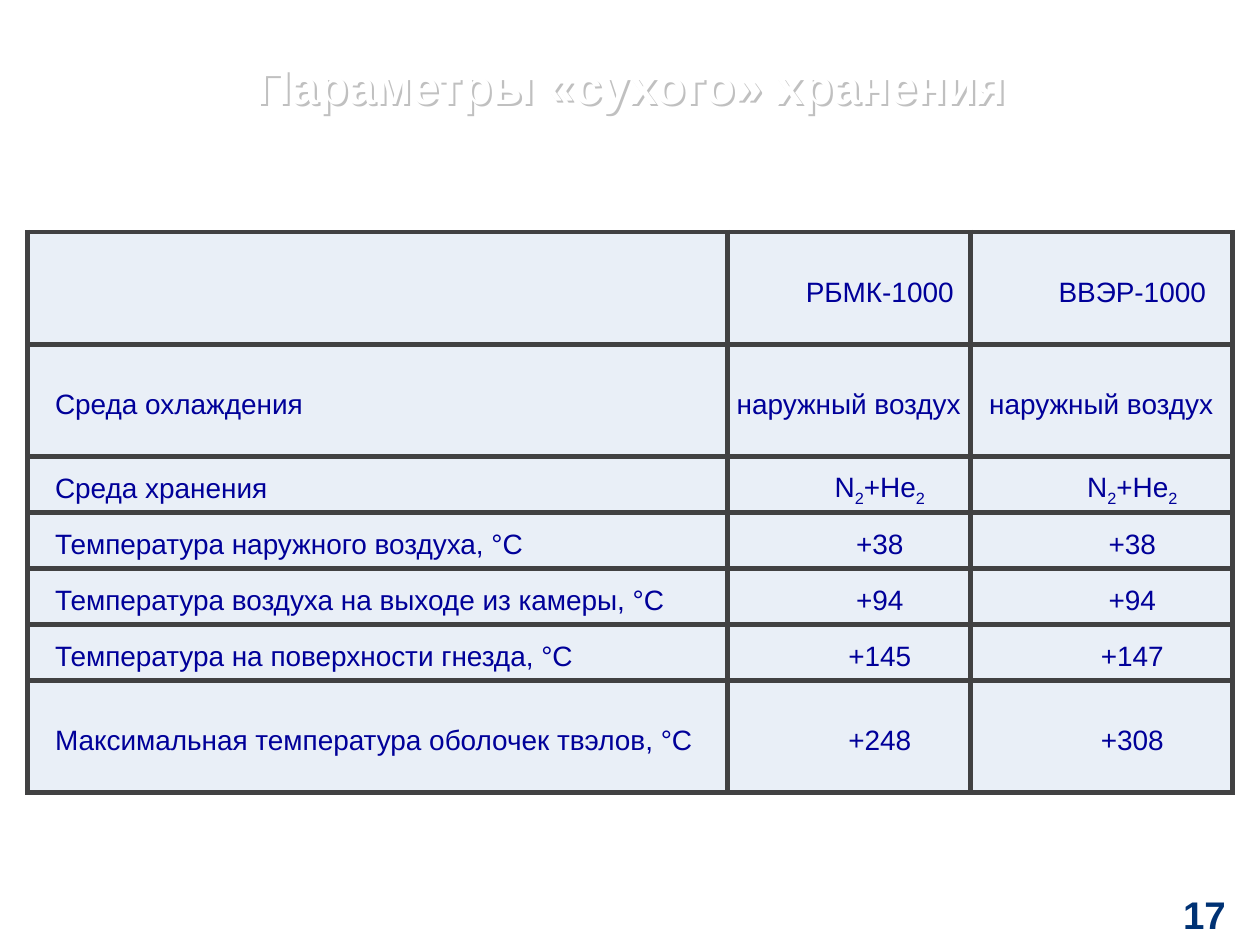
from lxml import etree
from pptx import Presentation
from pptx.dml.color import RGBColor
from pptx.enum.text import MSO_ANCHOR, PP_ALIGN
from pptx.oxml import parse_xml
from pptx.oxml.ns import nsdecls, qn
from pptx.util import Cm, Pt

LEFT, MID, RIGHT = PP_ALIGN.LEFT, PP_ALIGN.CENTER, PP_ALIGN.RIGHT
CENTRE = MSO_ANCHOR.MIDDLE

TITLE = "Параметры «сухого» хранения"
PAGE = "17"
GAS = ("N", "2", "+He", "2")  # every second piece is a subscript
AIR = "наружный воздух"
ROWS = [
    ("", "РБМК-1000", "ВВЭР-1000"),
    ("Среда охлаждения", AIR, AIR),
    ("Среда хранения", GAS, GAS),
    ("Температура наружного воздуха, °С", "+38", "+38"),
    ("Температура воздуха на выходе из камеры, °С", "+94", "+94"),
    ("Температура на поверхности гнезда, °С", "+145", "+147"),
    ("Максимальная температура оболочек твэлов, °С", "+248", "+308"),
]
WIDTHS = [14.1, 4.9, 5.28]
LOW = 1.13
HEIGHTS = [2 * LOW, 2 * LOW, LOW, LOW, LOW, LOW, 2 * LOW]
NAVY, INK, WHITE, PALE, EDGE = "003274", "000099", "FFFFFF", "E9EFF7", "414142"


def paint(fill, hue):
    fill.solid()
    fill.fore_color.rgb = RGBColor.from_string(hue)


def write(frame, text, size=16, hue=INK, bold=False, align=LEFT, space=1.0, indent=0):
    """Fill the first paragraph; a tuple alternates normal and subscript pieces."""
    par = frame.paragraphs[0]
    par.alignment, par.line_spacing = align, space
    props = par._p.get_or_add_pPr()
    props.set("marL", "0")
    props.set("indent", str(Cm(indent)))
    for i, piece in enumerate((text,) if isinstance(text, str) else text):
        run = par.add_run()
        run.text = piece
        font = run.font
        font.name, font.size, font.bold = "Arial", Pt(size), bold
        paint(font.fill, hue)
        if i % 2:
            run._r.get_or_add_rPr().set("baseline", "-25000")


def bare(frame):
    frame.word_wrap = True
    frame.vertical_anchor = CENTRE
    frame.margin_left = frame.margin_right = frame.margin_top = frame.margin_bottom = 0


def place(shape, x, y, w, h):
    shape.left, shape.top, shape.width, shape.height = Cm(x), Cm(y), Cm(w), Cm(h)


def border(cell):
    props = cell._tc.get_or_add_tcPr()
    for side in ("lnL", "lnR", "lnT", "lnB"):
        line = etree.SubElement(props, qn("a:" + side), w=str(Pt(3)))
        fill = etree.SubElement(line, qn("a:solidFill"))
        etree.SubElement(fill, qn("a:srgbClr"), val=EDGE)


def shade(shape):
    """Give the text of an unfilled shape a grey shadow."""
    shape.fill.background()
    shape._element.spPr.append(parse_xml(
        f'<a:effectLst {nsdecls("a")}><a:outerShdw dist="22000" dir="2700000" '
        'algn="tl" rotWithShape="0"><a:srgbClr val="C0C0C0"/>'
        '</a:outerShdw></a:effectLst>'))


def main():
    deck = Presentation()
    deck.slide_width, deck.slide_height = Cm(25.4), Cm(19.05)
    slide = deck.slides.add_slide(deck.slide_layouts[5])

    title = slide.shapes.title
    place(title, 0.58, 0.4, 24.26, 2.77)
    bare(title.text_frame)
    write(title.text_frame, TITLE, size=28, hue=WHITE, bold=True,
          align=MID, space=0.9)
    shade(title)

    grid = slide.shapes.add_table(len(ROWS), len(WIDTHS), Cm(0.56), Cm(4.68),
                                  Cm(sum(WIDTHS)), Cm(sum(HEIGHTS))).table
    grid.first_row = grid.horz_banding = False
    for col, width in zip(grid.columns, WIDTHS):
        col.width = Cm(width)
    for r, (row, height) in enumerate(zip(ROWS, HEIGHTS)):
        grid.rows[r].height = Cm(height)
        for c, text in enumerate(row):
            cell = grid.cell(r, c)
            cell.vertical_anchor = CENTRE
            cell.margin_left = cell.margin_right = Cm(0.05)
            cell.margin_top = cell.margin_bottom = 0
            border(cell)
            paint(cell.fill, PALE)
            if text:
                indent = 0.5 if c == 0 else 0 if text == AIR else 1.25
                write(cell.text_frame, text, align=MID if c else LEFT,
                      space=1.3, indent=indent)

    page = slide.shapes.add_textbox(Cm(23.14), Cm(17.91), Cm(1.57), Cm(1.04))
    bare(page.text_frame)
    write(page.text_frame, PAGE, size=22, hue=NAVY, bold=True, align=RIGHT)
    deck.save("out.pptx")


if __name__ == "__main__":
    main()
